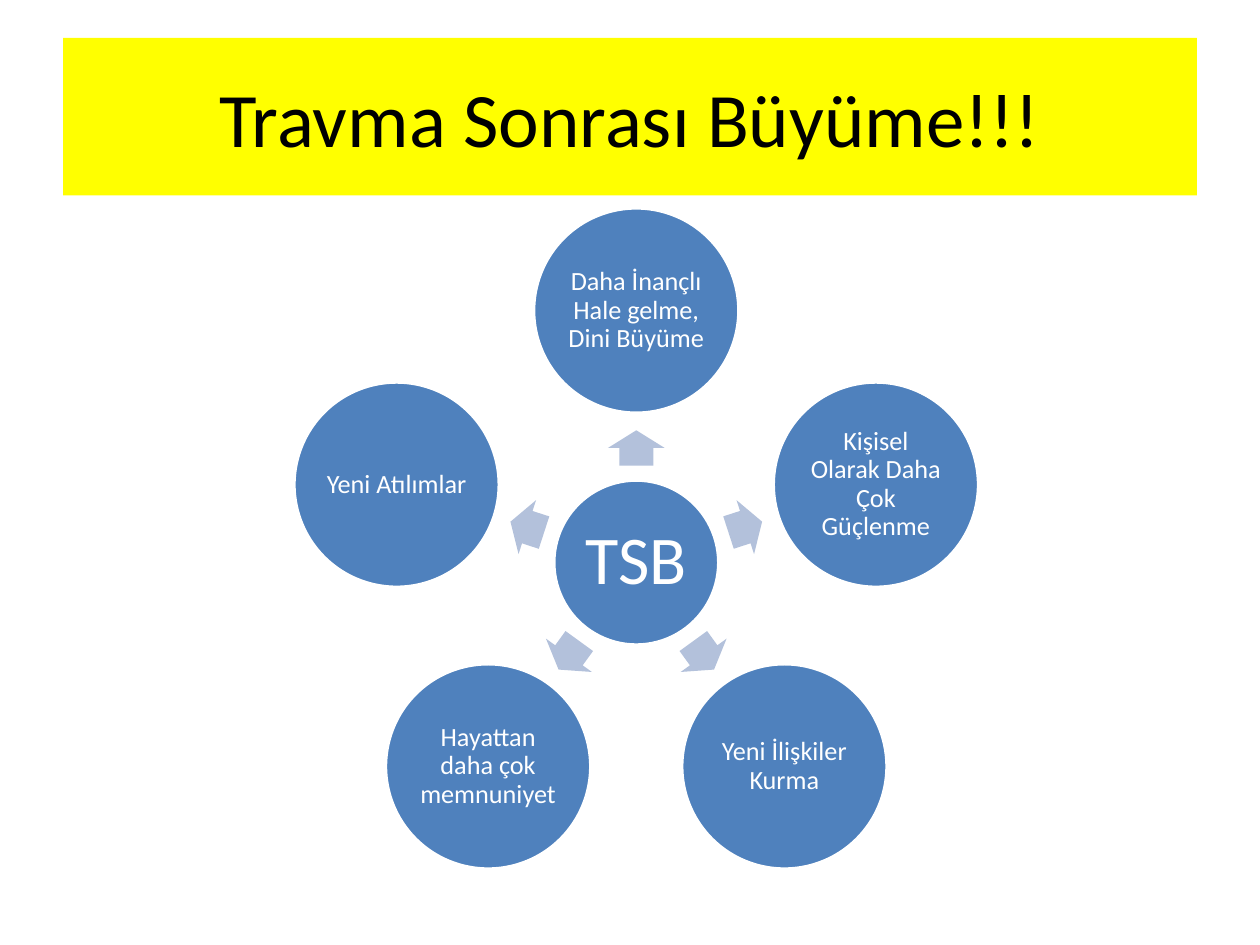
import math

import pptx
from pptx.dml.color import RGBColor
from pptx.enum.shapes import MSO_SHAPE
from pptx.enum.text import MSO_ANCHOR, PP_ALIGN
from pptx.util import Inches, Pt

# Content
TITLE = "Travma Sonrası Büyüme!!!"
HUB = "TSB"
OUTCOMES = [  # clockwise from the top
    "Daha İnançlı Hale gelme, Dini Büyüme",
    "Kişisel Olarak Daha Çok Güçlenme",
    "Yeni İlişkiler Kurma",
    "Hayattan daha çok memnuniyet",
    "Yeni Atılımlar",
]

# Style
FONT = "Calibri"
YELLOW = RGBColor(0xFF, 0xFF, 0x00)
BLUE = RGBColor(0x4F, 0x81, 0xBD)
PALE_BLUE = RGBColor(0xB3, 0xC1, 0xDB)
WHITE = RGBColor(0xFF, 0xFF, 0xFF)
BLACK = RGBColor(0x00, 0x00, 0x00)

# Radial layout, in inches
CX, CY = 5.05, 4.465
HUB_SIZE, OUTCOME_SIZE = 1.31, 1.63
ARROW_W, ARROW_H = 0.28, 0.45
OUTCOME_RADIUS, ARROW_RADIUS = 2.0, 0.91


def set_text(sp, text, size, color, margin, spacing):
    tf = sp.text_frame
    frame = {"word_wrap": True, "vertical_anchor": MSO_ANCHOR.MIDDLE}
    for side in ("left", "top", "right", "bottom"):
        frame[f"margin_{side}"] = Inches(margin)
    for name, value in frame.items():
        setattr(tf, name, value)
    p = tf.paragraphs[0]
    p.alignment = PP_ALIGN.CENTER
    p.line_spacing = spacing
    r = p.add_run()
    r.text = text
    for name, value in {"name": FONT, "size": Pt(size)}.items():
        setattr(r.font, name, value)
    r.font.color.rgb = color


def add_centred(s, kind, x, y, w, h, fill):
    sp = s.shapes.add_shape(kind, Inches(x - w / 2), Inches(y - h / 2),
                            Inches(w), Inches(h))
    sp.shadow.inherit = False
    sp.fill.solid()
    sp.fill.fore_color.rgb = fill
    sp.line.fill.background()
    return sp


def add_circle(s, x, y, diameter, text, size, margin):
    sp = add_centred(s, MSO_SHAPE.OVAL, x, y, diameter, diameter, BLUE)
    sp.line.color.rgb = WHITE
    sp.line.width = Pt(2)
    set_text(sp, text, size, WHITE, margin, 0.9)


def add_arrow(s, x, y, angle):
    sp = add_centred(s, MSO_SHAPE.RIGHT_ARROW, x, y, ARROW_W, ARROW_H, PALE_BLUE)
    sp.adjustments[0], sp.adjustments[1] = 0.6, 0.5
    sp.rotation = angle % 360


def polar(radius, angle):
    a = math.radians(angle)
    return CX + radius * math.cos(a), CY + radius * math.sin(a)


def main():
    prs = pptx.Presentation()
    prs.slide_width, prs.slide_height = Inches(10), Inches(7.5)
    s = prs.slides.add_slide(prs.slide_layouts[5])

    # Title band
    title = s.shapes.title
    title.left, title.top = Inches(0.5), Inches(0.3)
    title.width, title.height = Inches(9), Inches(1.25)
    title.fill.solid()
    title.fill.fore_color.rgb = YELLOW
    set_text(title, TITLE, 44, BLACK, 0.1, 1.0)

    # Hub, then an arrow and a circle for each outcome
    add_circle(s, CX, CY, HUB_SIZE, HUB, 39, 0.05)
    for i, text in enumerate(OUTCOMES):
        angle = -90 + i * 360 / len(OUTCOMES)
        add_arrow(s, *polar(ARROW_RADIUS, angle), angle)
        add_circle(s, *polar(OUTCOME_RADIUS, angle), OUTCOME_SIZE, text, 15, 0.02)

    prs.save("out.pptx")


if __name__ == "__main__":
    main()
